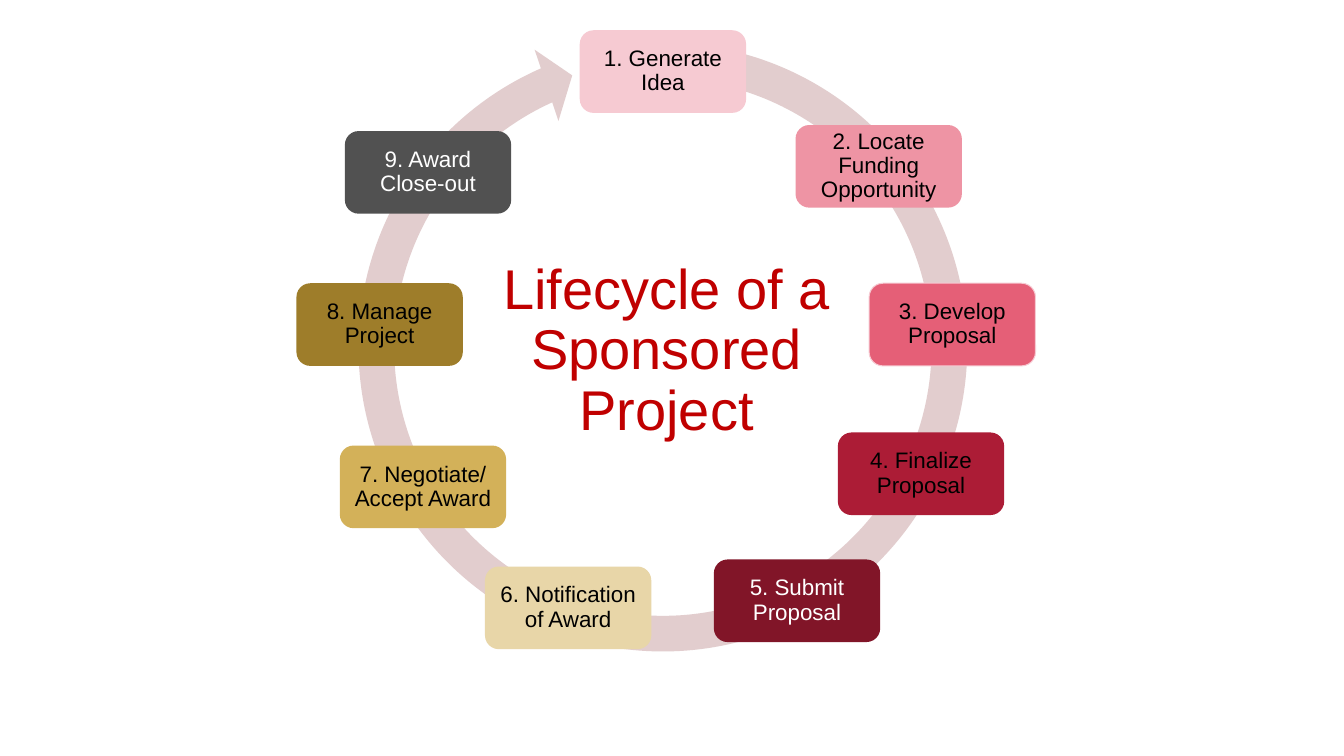
from pptx import Presentation
from pptx import util as u
from pptx.dml.color import RGBColor
from pptx.enum import shapes, text

STEP_SIZE = (1.65, 0.82)
STEPS = [
    ("1. Generate Idea", 5.75, 0.3, "F6CAD2", "000000"),
    ("2. Locate Funding Opportunity", 7.89, 1.24, "EE94A4", "000000"),
    ("3. Develop Proposal", 8.62, 2.81, "E55F77", "000000"),
    ("4. Finalize Proposal", 8.31, 4.29, "AC1C36", "000000"),
    ("5. Submit Proposal", 7.08, 5.55, "811528", "FFFFFF"),
    ("6. Notification of Award", 4.81, 5.62, "E8D6A8", "000000"),
    ("7. Negotiate/ Accept Award", 3.37, 4.42, "D3B159", "000000"),
    ("8. Manage Project", 2.94, 2.81, "9E7D2A", "000000"),
    ("9. Award Close-out", 3.42, 1.3, "515151", "FFFFFF"),
]
OUTLINED_STEP = "3. Develop Proposal"


def color(value):
    return RGBColor.from_string(value)


def write_text(shape, content, size, fill, anchor, inset=None):
    frame = shape.text_frame
    frame.word_wrap = True
    frame.auto_size = text.MSO_AUTO_SIZE.NONE
    frame.vertical_anchor = anchor
    if inset is not None:
        frame.margin_left = frame.margin_right = u.Inches(inset)
        frame.margin_top = frame.margin_bottom = u.Inches(inset)
    paragraph = frame.paragraphs[0]
    paragraph.alignment = text.PP_ALIGN.CENTER
    paragraph.line_spacing = 0.9
    run = paragraph.add_run()
    run.text = content
    run.font.name = "Arial"
    run.font.size = u.Pt(size)
    run.font.color.rgb = color(fill)


def add_filled(slide, kind, box, fill):
    shape = slide.shapes.add_shape(kind, *map(u.Inches, box))
    shape.shadow.inherit = False
    shape.fill.solid()
    shape.fill.fore_color.rgb = color(fill)
    shape.line.fill.background()
    return shape


def place_title(slide, box):
    title = slide.shapes.title
    title.left, title.top, title.width, title.height = map(u.Inches, box)
    write_text(title, "Lifecycle of a Sponsored Project", size=40, fill="C00000",
               anchor=text.MSO_ANCHOR.TOP)


def add_cycle_arrow(slide, box):
    arrow = add_filled(slide, shapes.MSO_SHAPE.CIRCULAR_ARROW, box, "E2CDCE")
    for index, value in enumerate((0.055, 3.307, 147.631, 168.099, 0.058)):
        arrow.adjustments[index] = value


def add_step(slide, box, label, fill, text_color):
    step = add_filled(slide, shapes.MSO_SHAPE.ROUNDED_RECTANGLE, box, fill)
    if label == OUTLINED_STEP:
        step.line.color.rgb = color("F6CAD2")
        step.line.width = u.Pt(0.75)
    write_text(step, label, size=16, fill=text_color,
               anchor=text.MSO_ANCHOR.MIDDLE, inset=0.07)


def main():
    presentation = Presentation()
    presentation.slide_width = u.Inches(13.33)
    presentation.slide_height = u.Inches(7.5)
    slide = presentation.slides.add_slide(presentation.slide_layouts[5])
    place_title(slide, (4.59, 2.54, 4.04, 2.64))
    add_cycle_arrow(slide, (3.36, 0.23, 6.43, 6.43))
    for label, left, top, fill, text_color in STEPS:
        add_step(slide, (left, top, *STEP_SIZE), label, fill, text_color)
    presentation.save("out.pptx")


if __name__ == "__main__":
    main()
